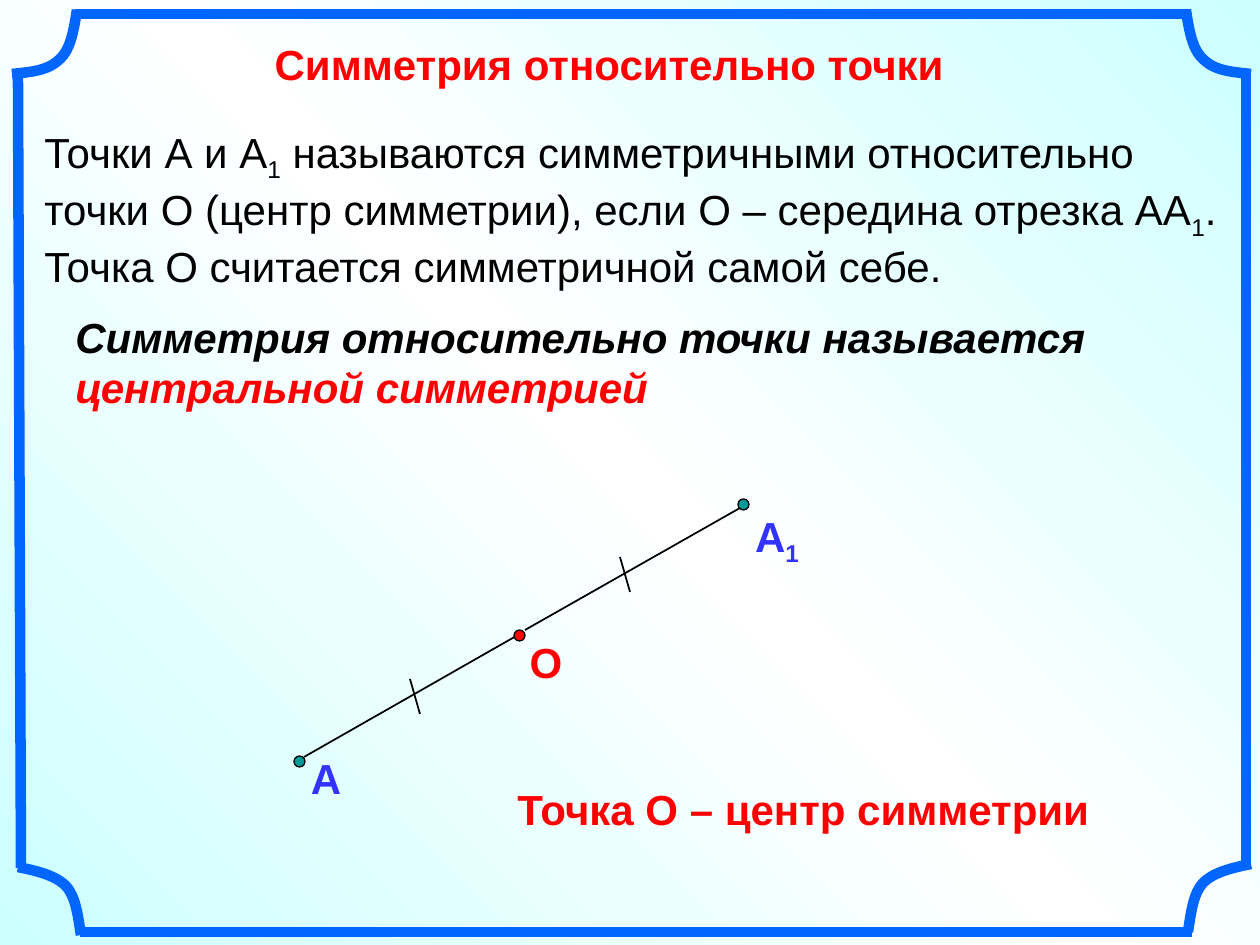
from copy import deepcopy

from lxml import etree
from pptx import Presentation
from pptx import util as u
from pptx.dml.color import RGBColor
from pptx.enum import shapes, text
from pptx.oxml.ns import qn

PX = u.Inches(1) / 126
RED = RGBColor(0xFF, 0x00, 0x00)
BLACK = RGBColor(0x00, 0x00, 0x00)
LABEL_BLUE = RGBColor(0x33, 0x33, 0xFF)
FRAME_BLUE = RGBColor(0x00, 0x66, 0xFF)
TEAL = RGBColor(0x00, 0x99, 0x99)
CYAN = RGBColor(0xCC, 0xFF, 0xFF)
WHITE = RGBColor(0xFF, 0xFF, 0xFF)

# Each paragraph is a list of runs; each run is (words, format changes).
SUB = {"subscript": True}
TITLE = [[("Симметрия относительно точки", {})]]
DEFINITION = [
    [("Точки А и А", {}), ("1", SUB),
     (" называются симметричными относительно точки О "
      "(центр симметрии), если О – середина отрезка АА", {}),
     ("1", SUB), (".", {})],
    [("Точка О считается симметричной самой себе.", {})],
]
TERM = [[("Симметрия относительно точки называется ", {}),
         ("центральной симметрией", {"color": RED})]]
CONCLUSION = [[("Точка О – центр симметрии", {})]]

# Centre and colour of each point, then its label, label position and colour.
POINTS = [
    ((519, 635), RED, [[("О", {})]], (504, 630), RED),
    ((299, 761), TEAL, [[("А", {})]], (284, 746), LABEL_BLUE),
    ((743, 504), TEAL, [[("А", {}), ("1", SUB)]], (735, 504), LABEL_BLUE),
]
DIAMETER = 11
SEGMENTS = [((304, 757), (518, 635)), ((740, 508), (525, 630))]
TICK_STARTS = [(410, 679), (620, 557)]
TICK = (10, 35)

FRAME_LINES = [((75, 14), (1191, 14)), ((80, 932), (1192, 932)),
               ((1246, 74), (1246, 868)), ((18, 74), (21, 868))]
# Two joined Bezier curves, as offsets from the start of the corner.
TOP_CORNER = [(0, 0), (3, 19), (6, 39), (17, 49), (29, 61), (46, 62), (65, 64)]
BOTTOM_CORNER = [(0, 0), (19, 4), (37, 8), (48, 19), (58, 30), (60, 49), (63, 68)]
# Curve, start, and horizontal direction.
CORNERS = [(TOP_CORNER, (77, 10), -1), (TOP_CORNER, (1186, 10), 1),
           (BOTTOM_CORNER, (18, 867), 1), (BOTTOM_CORNER, (1251, 864), -1)]


def px(*lengths):
    return [u.Emu(round(length * PX)) for length in lengths]


def write(shape, paragraphs, color=BLACK, bold=False, italic=False,
          align=text.PP_ALIGN.LEFT):
    frame = shape.text_frame
    frame.word_wrap = True
    frame.auto_size = text.MSO_AUTO_SIZE.SHAPE_TO_FIT_TEXT
    frame.vertical_anchor = text.MSO_ANCHOR.TOP
    for index, runs in enumerate(paragraphs):
        paragraph = frame.add_paragraph() if index else frame.paragraphs[0]
        paragraph.alignment = align
        for words, changes in runs:
            run = paragraph.add_run()
            run.text = words
            font = run.font
            font.name, font.size = "Arial", u.Pt(24)
            font.bold, font.italic = bold, italic
            font.color.rgb = changes.get("color", color)
            if changes.get("subscript"):
                run._r.get_or_add_rPr().set("baseline", "-25000")


def add_text(slide, box, paragraphs, **style):
    write(slide.shapes.add_textbox(*px(*box)), paragraphs, **style)


def add_line(slide, start, end, color=BLACK, width=1):
    line = slide.shapes.add_connector(
        shapes.MSO_CONNECTOR.STRAIGHT, *px(*start, *end))
    line.line.color.rgb = color
    line.line.width = u.Pt(width)
    etree.SubElement(line._element.spPr, qn("a:effectLst"))


def add_point(slide, centre, color):
    left, top = (value - DIAMETER // 2 for value in centre)
    dot = slide.shapes.add_shape(
        shapes.MSO_SHAPE.OVAL, *px(left, top, DIAMETER, DIAMETER))
    dot.shadow.inherit = False
    dot.fill.solid()
    dot.fill.fore_color.rgb = color
    dot.line.color.rgb = BLACK
    dot.line.width = u.Pt(0.75)


def bezier(controls, steps=12):
    """Return points along a cubic curve, without its start."""
    result = []
    for step in range(1, steps + 1):
        t = step / steps
        weights = ((1 - t) ** 3, 3 * t * (1 - t) ** 2, 3 * t * t * (1 - t), t ** 3)
        result.append(tuple(sum(w * c[axis] for w, c in zip(weights, controls))
                            for axis in (0, 1)))
    return result


def add_corner(slide, offsets, start, direction):
    controls = [(start[0] + direction * x, start[1] + y) for x, y in offsets]
    curve = bezier(controls[:4]) + bezier(controls[3:])
    builder = slide.shapes.build_freeform(*px(*start))
    builder.add_line_segments([px(*point) for point in curve], close=False)
    corner = builder.convert_to_shape()
    corner.shadow.inherit = False
    corner.fill.background()
    corner.line.color.rgb = FRAME_BLUE
    corner.line.width = u.Pt(6)


def set_background(slide):
    fill = slide.background.fill
    fill.gradient()
    fill.gradient_angle = 45
    stops = slide._element.find(".//" + qn("a:gsLst"))
    stops.insert(1, deepcopy(stops[0]))
    for stop, position, color in zip(
            fill.gradient_stops, (0, 0.5, 1), (CYAN, WHITE, CYAN)):
        stop.position = position
        stop.color.rgb = color


def main():
    presentation = Presentation()
    presentation.slide_width, presentation.slide_height = px(1260, 945)
    slide = presentation.slides.add_slide(presentation.slide_layouts[5])
    set_background(slide)

    title = slide.shapes.title
    title.left, title.top, title.width, title.height = px(262, 32, 735, 63)
    write(title, TITLE, color=RED, bold=True)

    for start, end in SEGMENTS:
        add_line(slide, start, end)
    for x, y in TICK_STARTS:
        add_line(slide, (x, y), (x + TICK[0], y + TICK[1]))
    for centre, color, label, position, label_color in POINTS:
        add_point(slide, centre, color)
        add_text(slide, (*position, 84, 63), label, color=label_color,
                 bold=True, align=text.PP_ALIGN.CENTER)

    add_text(slide, (32, 120, 1207, 164), DEFINITION)
    for start, end in FRAME_LINES:
        add_line(slide, start, end, FRAME_BLUE, 6)
    for offsets, start, direction in CORNERS:
        add_corner(slide, offsets, start, direction)
    add_text(slide, (399, 777, 809, 63), CONCLUSION, color=RED, bold=True,
             align=text.PP_ALIGN.CENTER)
    add_text(slide, (63, 305, 1124, 113), TERM, bold=True, italic=True)
    presentation.save("out.pptx")


if __name__ == "__main__":
    main()
